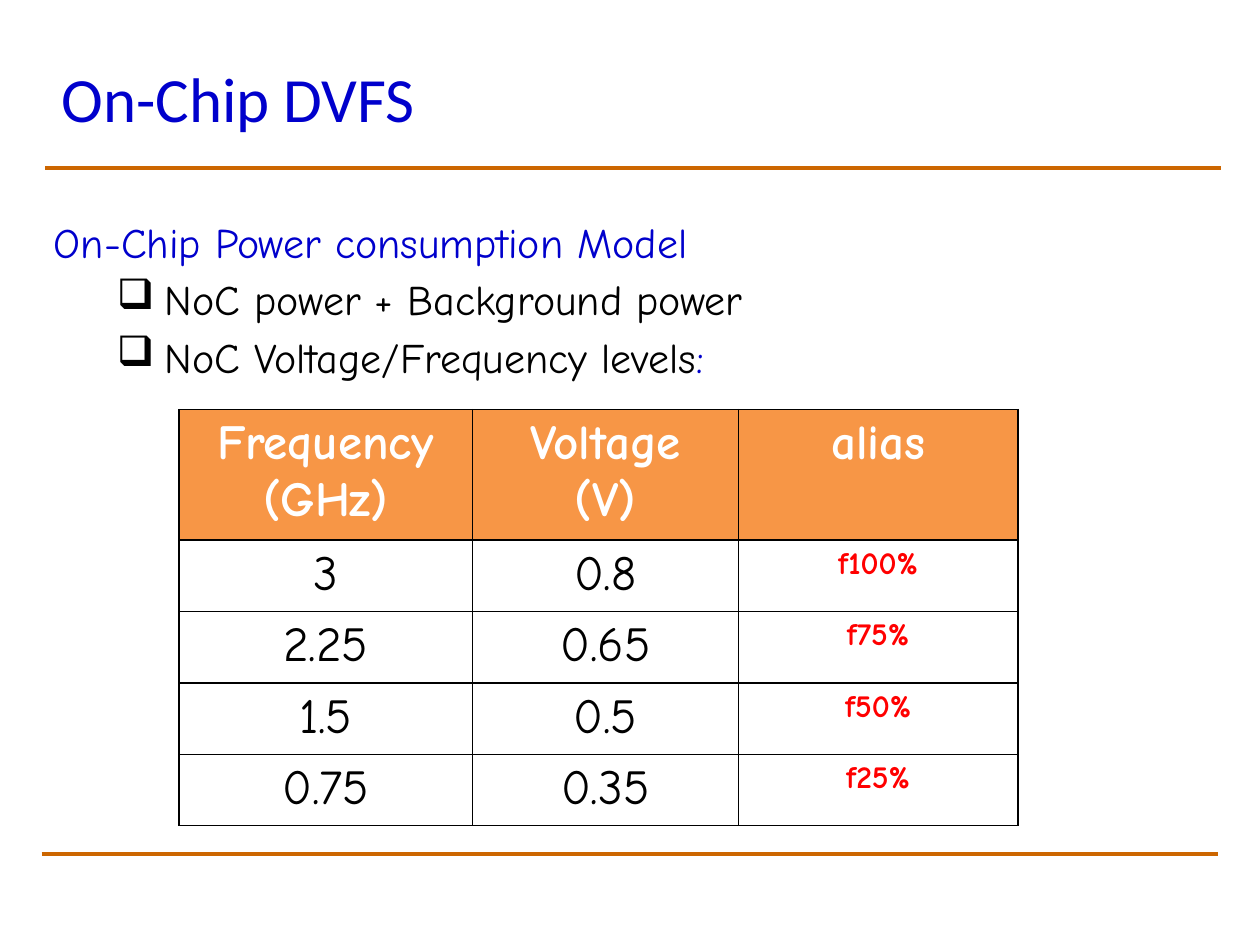
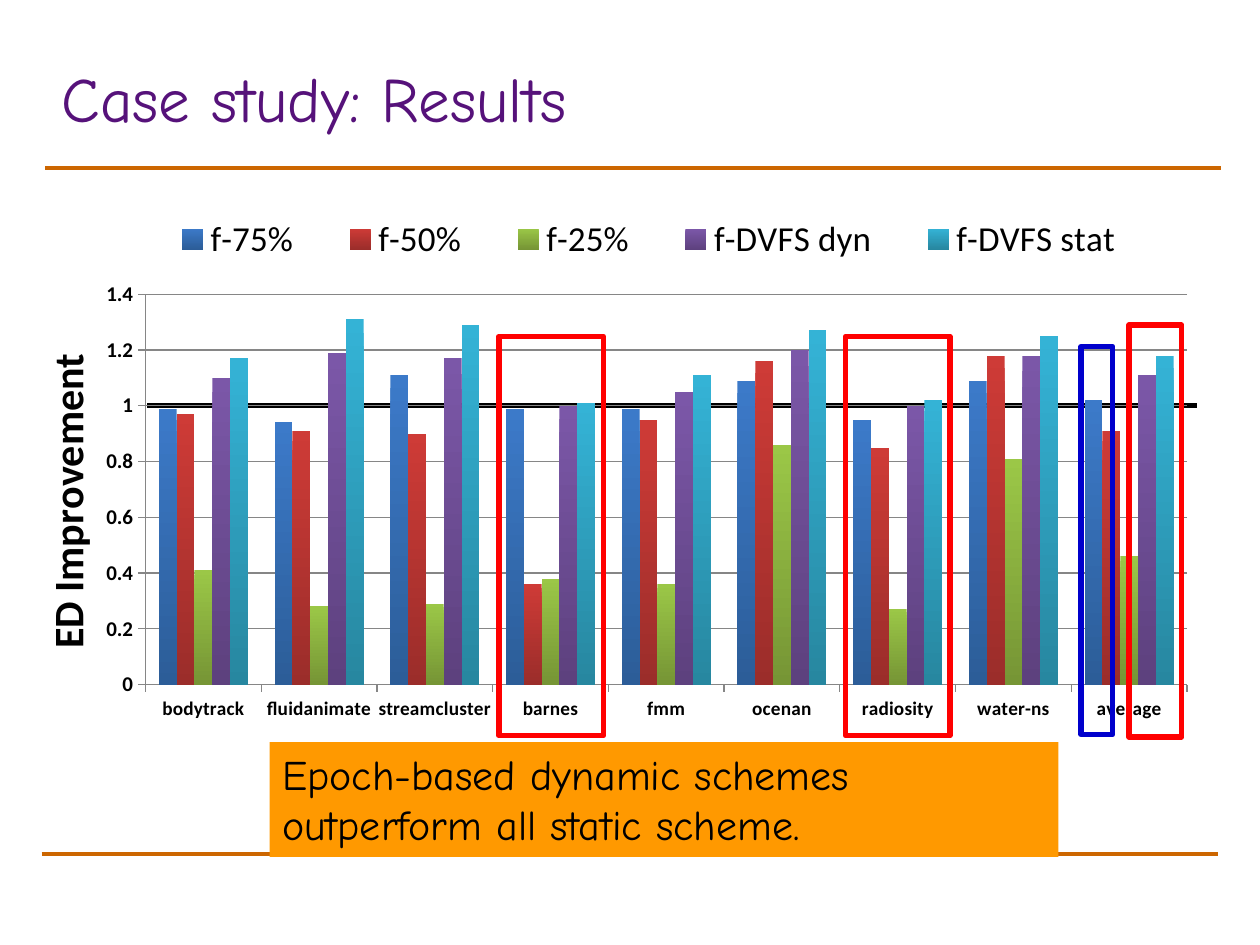
"""Build two slides on on-chip DVFS: the power model table and the case study chart."""
from lxml import etree
from pptx import Presentation
from pptx.chart.data import CategoryChartData
from pptx.dml.color import RGBColor
from pptx.enum.chart import XL_CHART_TYPE, XL_LEGEND_POSITION, XL_TICK_MARK
from pptx.enum.shapes import MSO_CONNECTOR, MSO_SHAPE
from pptx.enum.text import MSO_ANCHOR, PP_ALIGN
from pptx.oxml import parse_xml
from pptx.oxml.ns import nsdecls, qn
from pptx.util import Inches, Pt

COLUMNS = XL_CHART_TYPE.COLUMN_CLUSTERED
LEGEND_TOP = XL_LEGEND_POSITION.TOP
TICK_OUT = XL_TICK_MARK.OUTSIDE
STRAIGHT = MSO_CONNECTOR.STRAIGHT
RECTANGLE = MSO_SHAPE.RECTANGLE
TOP, MIDDLE = MSO_ANCHOR.TOP, MSO_ANCHOR.MIDDLE
LEFT, CENTER = PP_ALIGN.LEFT, PP_ALIGN.CENTER

BLACK = RGBColor(0x00, 0x00, 0x00)
WHITE = RGBColor(0xFF, 0xFF, 0xFF)
RED = RGBColor(0xFF, 0x00, 0x00)
BLUE = RGBColor(0x00, 0x00, 0xCC)
PURPLE = RGBColor(0x56, 0x12, 0x7A)
RULE_BROWN = RGBColor(0xCC, 0x66, 0x00)
HEADER_ORANGE = RGBColor(0xF7, 0x96, 0x46)
CALLOUT_ORANGE = RGBColor(0xFF, 0x99, 0x00)
GRID_GRAY = RGBColor(0x86, 0x86, 0x86)
BODY_FONT, PLAIN_FONT = "Comic Neue", "Calibri"


def write(para, text, color, **style):
    span = para.add_run()
    span.text = text
    span.font.color.rgb = color
    for name, value in {"name": BODY_FONT, "size": Pt(24), **style}.items():
        setattr(span.font, name, value)


def draw_line(page, left, right, top, color, weight):
    line = page.shapes.add_connector(STRAIGHT, Inches(left), Inches(top), Inches(right), Inches(top))
    line.line.color.rgb = color
    line.line.width = Pt(weight)
    etree.SubElement(line._element.spPr, qn("a:effectLst"))


deck = Presentation()
deck.slide_width, deck.slide_height = Inches(10), Inches(7.5)

pages = []
for title, width, color, font in [
    ("On-Chip DVFS", 8.36, BLUE, PLAIN_FONT),
    ("Case study: Results", 9.2, PURPLE, BODY_FONT),
]:
    page = deck.slides.add_slide(deck.slide_layouts[6])
    draw_line(page, 0.36, 9.69, 1.33, RULE_BROWN, 2.25)
    draw_line(page, 0.33, 9.67, 6.78, RULE_BROWN, 2.25)
    box = page.shapes.add_textbox(Inches(0.39), Inches(0.37), Inches(width), Inches(0.91))
    box.text_frame.word_wrap = True
    box.text_frame.vertical_anchor = MIDDLE
    para = box.text_frame.paragraphs[0]
    para.line_spacing = 0.8
    write(para, title, color, name=font, size=Pt(36))
    pages.append(page)
model_page, results_page = pages

box = model_page.shapes.add_textbox(Inches(0.33), Inches(1.67), Inches(9.41), Inches(1.44))
box.text_frame.word_wrap = True
write(box.text_frame.paragraphs[0], "On-Chip Power consumption Model", BLUE)
for text, ending in [("NoC power + Background power", ""), ("NoC Voltage/Frequency levels", ":")]:
    para = box.text_frame.add_paragraph()
    para.level = 1
    para.space_before = Pt(4)
    write(para, text, BLACK)
    if ending:
        write(para, ending, BLUE)
    properties = para._p.get_or_add_pPr()
    properties.set("marL", str(Inches(0.88)))
    properties.set("indent", str(Inches(-0.38)))
    etree.SubElement(properties, qn("a:buChar"), char="❑")

levels = [
    (("Frequency", "(GHz)"), ("Voltage", "(V)"), ("alias",)),
    (("3",), ("0.8",), ("f100%",)),
    (("2.25",), ("0.65",), ("f75%",)),
    (("1.5",), ("0.5",), ("f50%",)),
    (("0.75",), ("0.35",), ("f25%",)),
]
header_style = {"color": WHITE, "size": Pt(28), "bold": True}
value_style = {"color": BLACK, "size": Pt(28), "bold": False}
alias_style = {"color": RED, "size": Pt(18), "bold": True}
table = model_page.shapes.add_table(
    len(levels), 3, Inches(1.42), Inches(3.25), Inches(6.66), Inches(2.05)
).table
for column, width in zip(table.columns, (2.33, 2.11, 2.22)):
    column.width = Inches(width)
for row_number, row in enumerate(levels):
    table.rows[row_number].height = Inches(0.41)
    for column_number, lines in enumerate(row):
        cell = table.cell(row_number, column_number)
        cell.fill.solid()
        cell.fill.fore_color.rgb = HEADER_ORANGE if row_number == 0 else WHITE
        style = header_style if row_number == 0 else alias_style if column_number == 2 else value_style
        para = cell.text_frame.paragraphs[0]
        para.alignment = CENTER
        for line_number, text in enumerate(lines):
            if line_number:
                para.add_line_break()
            write(para, text, **style)
        for position, side in enumerate(("lnL", "lnR", "lnT", "lnB")):
            cell._tc.get_or_add_tcPr().insert(position, parse_xml(
                f'<a:{side} {nsdecls("a")} w="{Pt(1)}"><a:solidFill>'
                f'<a:srgbClr val="{BLACK}"/></a:solidFill></a:{side}>'
            ))

draw_line(results_page, 1.17, 9.5, 3.22, BLACK, 2.75)

callout = results_page.shapes.add_shape(RECTANGLE, Inches(2.14), Inches(5.89), Inches(6.26), Inches(0.91))
callout.shadow.inherit = False
callout.fill.solid()
callout.fill.fore_color.rgb = CALLOUT_ORANGE
callout.line.fill.background()
callout.text_frame.word_wrap = True
callout.text_frame.vertical_anchor = TOP
para = callout.text_frame.paragraphs[0]
para.alignment = LEFT
write(para, "Epoch-based dynamic schemes outperform all static scheme.", BLACK)

schemes = [
    ("f-75%", (0.99, 0.94, 1.11, 0.99, 0.99, 1.09, 0.95, 1.09, 1.02), "3C7AC9", "2C5D98"),
    ("f-50%", (0.97, 0.91, 0.9, 0.36, 0.95, 1.16, 0.85, 1.18, 0.91), "CE3B37", "9B2D2A"),
    ("f-25%", (0.41, 0.28, 0.29, 0.38, 0.36, 0.86, 0.27, 0.81, 0.46), "9BC747", "769535"),
    ("f-DVFS dyn", (1.1, 1.19, 1.17, 1, 1.05, 1.2, 1, 1.18, 1.11), "7B57A8", "5D417E"),
    ("f-DVFS stat", (1.17, 1.31, 1.29, 1.01, 1.11, 1.27, 1.02, 1.25, 1.18), "34B3D6", "2787A0"),
]
chart_data = CategoryChartData()
chart_data.categories = [
    "bodytrack", "fluidanimate", "streamcluster", "barnes", "fmm",
    "ocenan", "radiosity", "water-ns", "average",
]
for name, values, _, _ in schemes:
    chart_data.add_series(name, values)
chart = results_page.shapes.add_chart(
    COLUMNS, Inches(0.25), Inches(1.5), Inches(9.33), Inches(4.42), chart_data
).chart
chart.has_title = False
chart.font.name = PLAIN_FONT
chart.font.size = Pt(10)
chart.font.color.rgb = BLACK
plot = chart.plots[0]
plot.gap_width = 150
plot.overlap = 0
plot.vary_by_categories = False
for series, (_, _, top_color, bottom_color) in zip(plot.series, schemes):
    series.invert_if_negative = False
    fill = series.format.fill
    fill.gradient()
    fill.gradient_angle = 270
    for stop, position, color in zip(fill.gradient_stops, (0, 1), (top_color, bottom_color)):
        stop.position = position
        stop.color.rgb = RGBColor.from_string(color)

value_axis = chart.value_axis
for name, value in {"minimum_scale": 0, "maximum_scale": 1.4, "major_unit": 0.2}.items():
    setattr(value_axis, name, value)
value_axis.has_major_gridlines = True
value_axis.major_gridlines.format.line.color.rgb = GRID_GRAY
value_axis.tick_labels.number_format = "General"
value_axis.tick_labels.number_format_is_linked = False
write(value_axis.axis_title.text_frame.paragraphs[0], "ED Improvement", BLACK, name=PLAIN_FONT, bold=True)
for axis, size in ((chart.category_axis, 11), (value_axis, 12)):
    axis.major_tick_mark = TICK_OUT
    axis.format.line.color.rgb = GRID_GRAY
    axis.tick_labels.font.size = Pt(size)
    axis.tick_labels.font.bold = True

chart.has_legend = True
chart.legend.position = LEGEND_TOP
chart.legend.include_in_layout = False
chart.legend.font.size = Pt(20)

chart_space = chart._chartSpace
for parent_name, position, target, bounds in [
    ("c:plotArea", 0, '<c:layoutTarget val="inner"/>', (0.097, 0.189, 0.886, 0.701)),
    ("c:legend", 1, "", (0.09, 0.04, 0.87, 0.1)),
]:
    parent = chart_space.find(".//" + qn(parent_name))
    for old_layout in parent.findall(qn("c:layout")):
        parent.remove(old_layout)
    modes = '<c:xMode val="edge"/><c:yMode val="edge"/>'
    sizes = "".join(f'<c:{key} val="{value}"/>' for key, value in zip("xywh", bounds))
    parent.insert(position, parse_xml(
        f'<c:layout {nsdecls("c")}><c:manualLayout>{target}{modes}{sizes}</c:manualLayout></c:layout>'
    ))
chart_space.find(qn("c:chart")).addnext(parse_xml(
    f'<c:spPr {nsdecls("c", "a")}><a:noFill/><a:ln><a:noFill/></a:ln></c:spPr>'
))

for left, top, width, height, color in [
    (8.96, 2.58, 0.42, 3.27, RED),
    (8.58, 2.75, 0.25, 3.08, BLUE),
    (3.96, 2.67, 0.83, 3.17, RED),
    (6.71, 2.67, 0.83, 3.17, RED),
]:
    frame = results_page.shapes.add_shape(RECTANGLE, Inches(left), Inches(top), Inches(width), Inches(height))
    frame.shadow.inherit = False
    frame.fill.background()
    frame.line.color.rgb = color
    frame.line.width = Pt(3)

deck.save("out.pptx")
